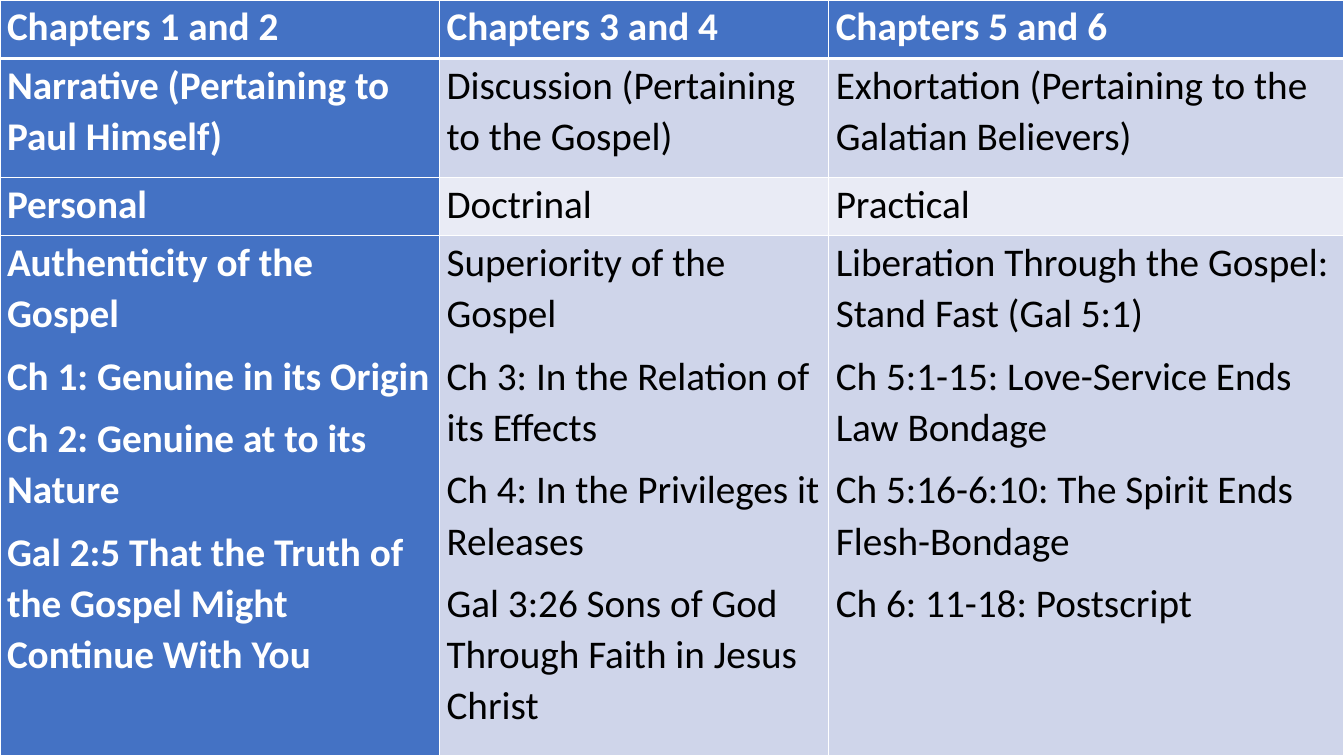
from lxml import etree
from pptx import Presentation
from pptx import util as u
from pptx.dml import color
from pptx.oxml import ns

COLORS = {"blue": "4472C4", "light": "CFD5EA", "pale": "E9EBF5",
          "white": "FFFFFF", "black": "000000"}

COL_WIDTHS = [4.36, 3.86, 5.11]
ROW_HEIGHTS = [0.58, 1.18, 0.58, 5.16]
ROW_FILLS = ["blue", "light", "pale", "light"]

# Each cell is a list of paragraphs
ROWS = [
    [["Chapters 1 and 2"], ["Chapters 3 and 4"], ["Chapters 5 and 6"]],
    [["Narrative (Pertaining to Paul Himself)"],
     ["Discussion (Pertaining to the Gospel)"],
     ["Exhortation (Pertaining to the Galatian Believers)"]],
    [["Personal"], ["Doctrinal"], ["Practical"]],
    [["Authenticity of the Gospel",
      "Ch 1: Genuine in its Origin",
      "Ch 2: Genuine at to its Nature",
      "Gal 2:5 That the Truth of the Gospel Might Continue With You"],
     ["Superiority of the Gospel",
      "Ch 3: In the Relation of its Effects",
      "Ch 4: In the Privileges it Releases",
      "Gal 3:26 Sons of God Through Faith in Jesus Christ"],
     ["Liberation Through the Gospel: Stand Fast (Gal 5:1)",
      "Ch 5:1-15: Love-Service Ends Law Bondage",
      "Ch 5:16-6:10: The Spirit Ends Flesh-Bondage",
      "Ch 6: 11-18: Postscript"]],
]


def add_text(p, text, size=28, font="Calibri", fill="black", bold=False):
    p.line_spacing = 1.07
    p.space_after = u.Pt(8)
    r = p.add_run()
    r.text = text
    r.font.size = u.Pt(size)
    r.font.name = font
    r.font.bold = bold
    r.font.color.rgb = color.RGBColor.from_string(COLORS[fill])


def add_border(cell, side, width):
    ln = etree.SubElement(cell._tc.get_or_add_tcPr(), ns.qn(f"a:ln{side}"),
                          w=str(u.Pt(width)))
    solid = etree.SubElement(ln, ns.qn("a:solidFill"))
    etree.SubElement(solid, ns.qn("a:srgbClr"), val=COLORS["white"])


# Slide
prs = Presentation()
prs.slide_width = u.Inches(13.33)
prs.slide_height = u.Inches(7.5)
s = prs.slides.add_slide(prs.slide_layouts[6])

# Table grid
table = s.shapes.add_table(len(ROWS), len(COL_WIDTHS), 0, 0,
                           prs.slide_width, prs.slide_height).table
table.first_col = True
for column, width in zip(table.columns, COL_WIDTHS):
    column.width = u.Inches(width)
for row, height in zip(table.rows, ROW_HEIGHTS):
    row.height = u.Inches(height)

# Cells: the header row and first column are bold white on blue
for i, row in enumerate(ROWS):
    for j, paragraphs in enumerate(row):
        cell = table.cell(i, j)
        heading = i == 0 or j == 0
        cell.margin_left = cell.margin_right = u.Inches(0.07)
        cell.margin_top = cell.margin_bottom = 0

        # Borders: a thick rule under the header row
        for side in "LRTB":
            thick = (i, side) in [(0, "B"), (1, "T")]
            add_border(cell, side, 3 if thick else 1)
        cell.fill.solid()
        cell.fill.fore_color.rgb = color.RGBColor.from_string(
            COLORS["blue" if heading else ROW_FILLS[i]])

        tf = cell.text_frame
        for k, line in enumerate(paragraphs):
            p = tf.add_paragraph() if k else tf.paragraphs[0]
            add_text(p, line, fill="white" if heading else "black",
                     bold=heading)

prs.save("out.pptx")
